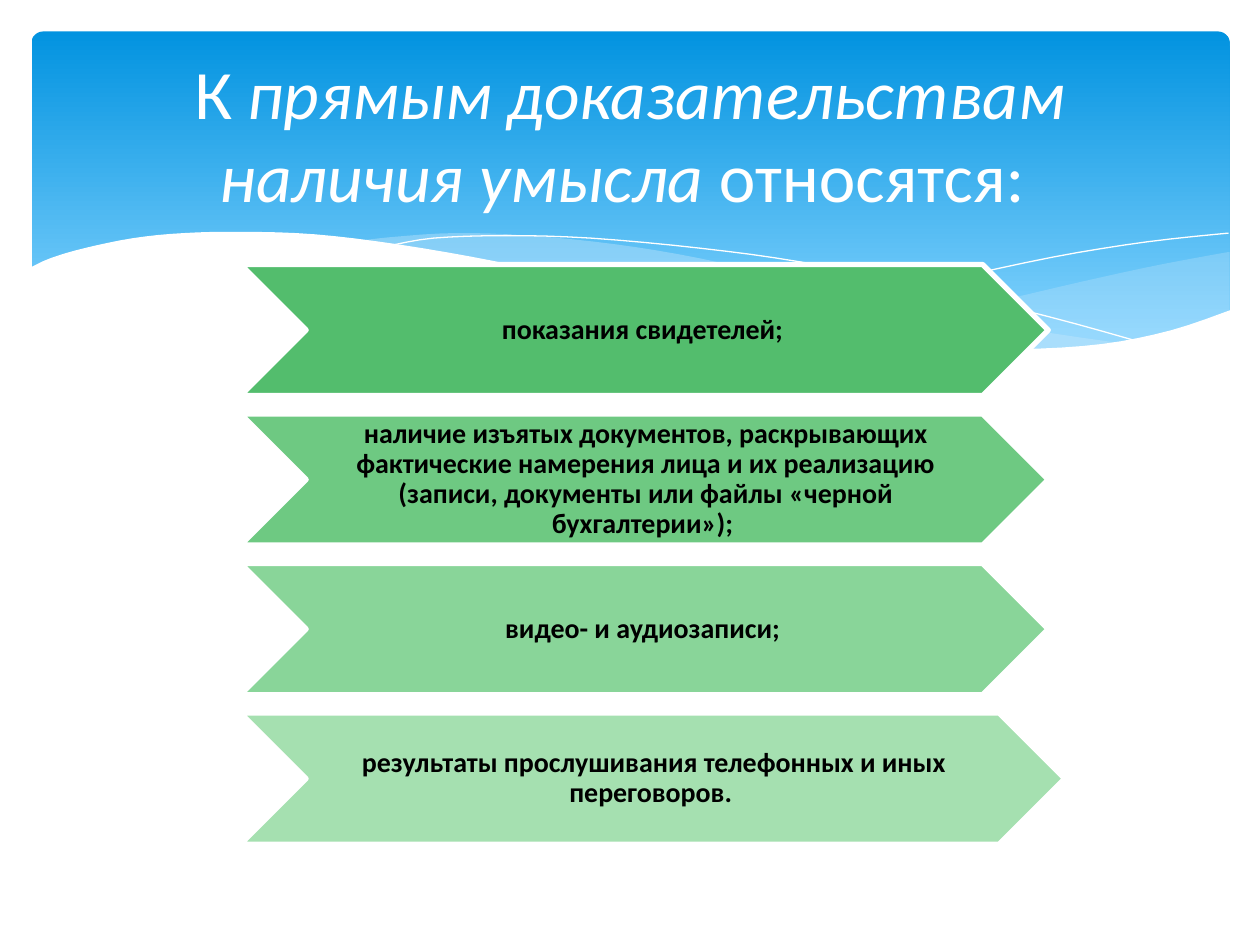
from lxml.etree import SubElement
from pptx import Presentation
from pptx.dml.color import RGBColor
from pptx.enum.shapes import MSO_SHAPE
from pptx.enum.text import MSO_ANCHOR, PP_ALIGN
from pptx.oxml.ns import qn
from pptx.util import Inches, Pt

COLORS = {"sky_top": "0293E0", "sky_bottom": "83D3FE", "mist": "C6E7FC",
          "white": "FFFFFF", "black": "000000"}
FONT = "Calibri"

TITLE = [("К ", False), ("прямым доказательствам наличия умысла ", True),
         ("относятся: ", False)]

# text, fill, width
EVIDENCE = [
    ("показания свидетелей; ", "53BD6D", 6.41),
    ("наличие изъятых документов, раскрывающих фактические намерения лица и их "
     "реализацию (записи, документы или файлы «черной бухгалтерии»); ", "6EC982", 6.41),
    ("видео- и аудиозаписи; ", "89D599", 6.41),
    ("результаты прослушивания телефонных и иных переговоров. ", "A5E0B0", 6.54),
]

# Each wave is a chain of smooth curves, in inches from the corner of the wave box
RIGHT_WAVE = [
    [(9.52, .16), (8.98, .26), (8.38, .39), (7.56, .58), (6.83, .73), (6.38, .81)],
    [(6.38, .81), (6.82, .87), (7.34, .92), (7.8, .94), (8.31, .92), (8.74, .86),
     (9.12, .78), (9.53, .63)],
    [(9.53, .63), (9.53, .16)],
]
MIDDLE_WAVE = [
    [(8.7, .89), (7.84, .76), (6.83, .56), (6.06, .38), (5.32, .21), (4.66, .1),
     (3.97, .03), (3.38, .01), (2.9, .04), (2.63, .07)],
    [(2.63, .07), (3.39, .19), (4.26, .38), (5.43, .64), (6.27, .8), (6.99, .9),
     (7.62, .94), (8.15, .94), (8.7, .89)],
]
FALLING_LINE = [[(2.86, .11), (3.21, .05), (3.78, .03), (4.46, .05), (5.33, .13),
                 (6.13, .24), (7.04, .42), (8.08, .67), (8.84, .88)]]
RISING_LINE = [[(5.9, .73), (6.49, .57), (7.25, .39), (8.13, .2), (8.87, .08), (9.52, .01)]]
FRONT_WAVE = [
    [(9.54, .62), (9.07, .78), (8.52, .89), (7.86, .93), (7.21, .9), (6.45, .81),
     (5.56, .66), (4.8, .49), (4.24, .36), (3.68, .23), (2.93, .1), (2.27, .02),
     (1.7, 0), (1.23, .01), (.83, .05), (.44, .13), (.17, .21), (0, .29)],
    [(0, .29), (0, 1.45)],
    [(0, 1.45), (9.54, 1.45)],
]


def rgb(name):
    return RGBColor.from_string(COLORS.get(name, name))


def smooth(points, steps=4):
    """Catmull-Rom curve through the points."""
    ends = [points[0], *points, points[-1]]
    curve = [points[0]]
    for a, b, c, d in zip(ends, ends[1:], ends[2:], ends[3:]):
        for i in range(1, steps + 1):
            t = i / steps
            curve.append(tuple(
                (2 * q + (r - p) * t + (2 * p - 5 * q + 4 * r - s) * t ** 2
                 + (3 * q - p - 3 * r + s) * t ** 3) / 2
                for p, q, r, s in zip(a, b, c, d)))
    return curve


def add_wave(slide, left, top, curves, fill=None, alpha=None):
    """Filled wave, or a white hairline when no fill is given."""
    points = [(Inches(left + x), Inches(top + y))
              for curve in curves for x, y in smooth(curve)]
    builder = slide.shapes.build_freeform(*points[0])
    builder.add_line_segments(points[1:], close=fill is not None)
    s = builder.convert_to_shape()
    s.shadow.inherit = False
    if fill is None:
        s.fill.background()
        s.line.color.rgb = rgb("white")
        s.line.width = Pt(0)
        return
    s.line.fill.background()
    s.fill.solid()
    s.fill.fore_color.rgb = rgb(fill)
    if alpha:
        color = s._element.spPr.find(qn("a:solidFill")).find(qn("a:srgbClr"))
        SubElement(color, qn("a:alpha"), val=str(alpha * 1000))


def add_text(slide, left, top, width, height, runs, size, color, bold=False,
             spacing=1.0, margins=None):
    """Centred paragraph made of (text, italic) runs."""
    box = slide.shapes.add_textbox(*map(Inches, (left, top, width, height)))
    tf = box.text_frame
    tf.word_wrap = True
    tf.vertical_anchor = MSO_ANCHOR.MIDDLE
    for side, value in (margins or {}).items():
        setattr(tf, f"margin_{side}", Inches(value))
    p = tf.paragraphs[0]
    p.alignment = PP_ALIGN.CENTER
    p.line_spacing = spacing
    for text, italic in runs:
        r = p.add_run()
        r.text = text
        style = {"name": FONT, "size": Pt(size), "bold": bold, "italic": italic}
        for key, value in style.items():
            setattr(r.font, key, value)
        r.font.color.rgb = rgb(color)


def add_sky(slide, left, top, width, height):
    s = slide.shapes.add_shape(MSO_SHAPE.ROUNDED_RECTANGLE,
                               *map(Inches, (left, top, width, height)))
    s.adjustments[0] = 0.034
    s.shadow.inherit = False
    s.line.fill.background()
    s.fill.gradient()
    s.fill.gradient_angle = 270
    stops = [(0, "sky_top"), (0.9, "sky_bottom")]
    for stop, (position, color) in zip(s.fill.gradient_stops, stops):
        stop.position = position
        stop.color.rgb = rgb(color)


def add_waves(slide, left, top):
    add_wave(slide, left, top, RIGHT_WAVE, "mist", 29)
    add_wave(slide, left, top, MIDDLE_WAVE, "mist", 40)
    add_wave(slide, left, top, FALLING_LINE)
    add_wave(slide, left, top, RISING_LINE)
    add_wave(slide, left, top, FRONT_WAVE, "white")


def add_evidence_list(slide, left, top, height, row=1.04):
    pitch = (height - row) / (len(EVIDENCE) - 1)
    point = row / 2
    margins = {"left": 0.02, "top": 0.01, "right": 0, "bottom": 0.01}
    for i, (text, fill, width) in enumerate(EVIDENCE):
        y = top + i * pitch
        s = slide.shapes.add_shape(MSO_SHAPE.CHEVRON,
                                   *map(Inches, (left, y, width, row)))
        s.shadow.inherit = False
        s.fill.solid()
        s.fill.fore_color.rgb = rgb(fill)
        s.line.color.rgb = rgb("white")
        s.line.width = Pt(3)
        add_text(slide, left + point, y, width - 2 * point, row, [(text, False)],
                 16, "black", bold=True, spacing=0.9, margins=margins)


def main():
    prs = Presentation()
    prs.slide_width, prs.slide_height = Inches(10), Inches(7.5)
    slide = prs.slides.add_slide(prs.slide_layouts[6])
    add_sky(slide, 0.25, 0.25, 9.51, 2.7)
    add_waves(slide, 0.23, 1.84)
    add_evidence_list(slide, 1.91, 2.1, 4.6)
    add_text(slide, 0.5, 0.37, 9, 1.37, TITLE, 39.6, "white")
    prs.save("out.pptx")


if __name__ == "__main__":
    main()
